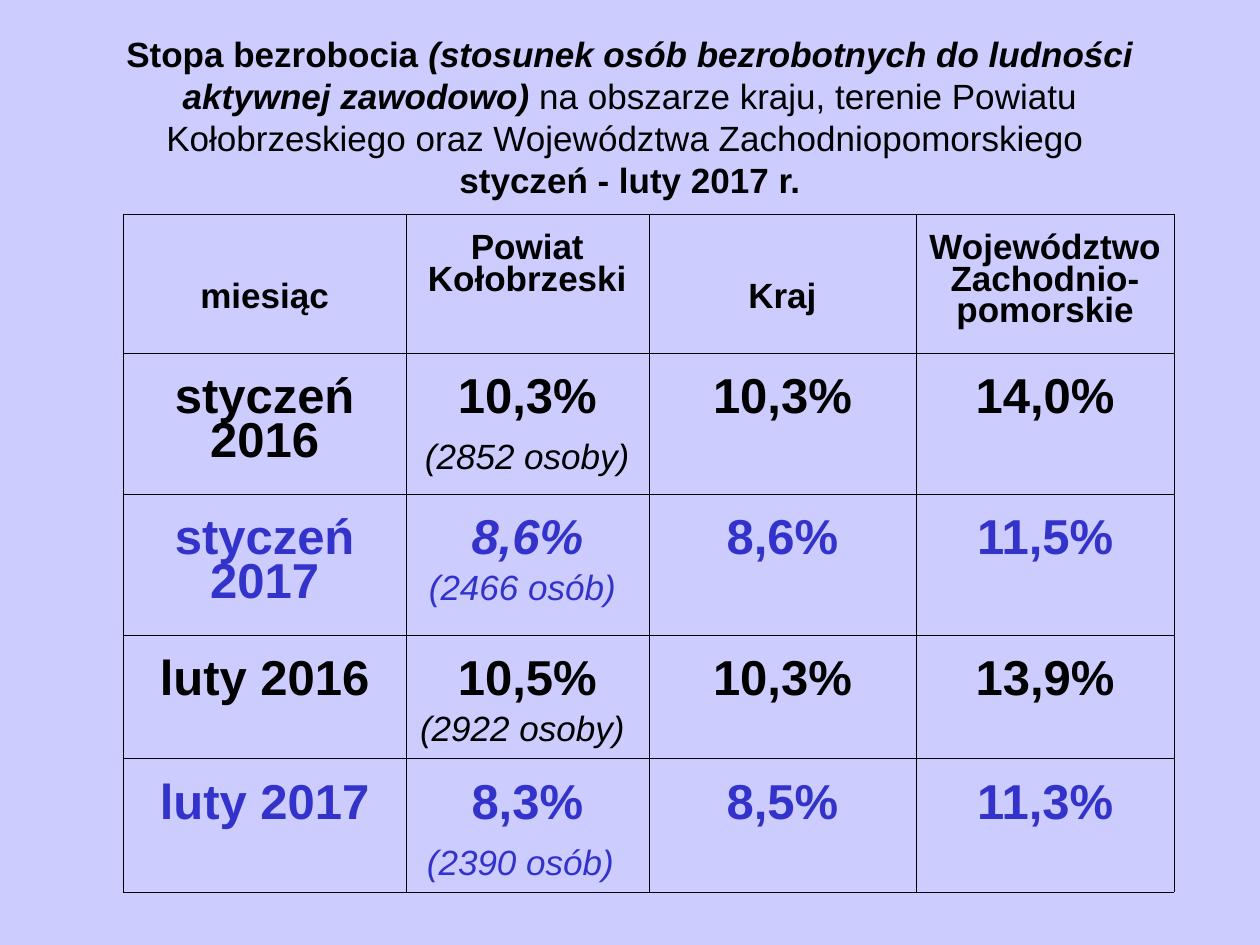
import dataclasses

import pptx
import pptx.dml.color
import pptx.enum.text
import pptx.oxml
import pptx.oxml.ns
import pptx.util

Inches, Pt = pptx.util.Inches, pptx.util.Pt
CENTER = pptx.enum.text.PP_ALIGN.CENTER
ANCHOR = pptx.enum.text.MSO_ANCHOR


@dataclasses.dataclass(frozen=True)
class Theme:
    background: str = "CCCCFF"
    ink: str = "000000"
    accent: str = "3333CC"
    font: str = "Arial"
    small: int = 20
    large: int = 28
    tight: float = 0.81
    inner_line: float = 0.11
    outer_line: float = 0.23


@dataclasses.dataclass(frozen=True)
class Span:
    text: str
    size: int = Theme.small
    bold: bool = False
    italic: bool = False


class SlideBuilder:
    def __init__(self, deck, theme):
        self.deck, self.theme = deck, theme
        self.page = deck.slides.add_slide(deck.slide_layouts[5])
        fill = self.page.background.fill
        fill.solid()
        fill.fore_color.rgb = self.color(theme.background)

    def color(self, value):
        return pptx.dml.color.RGBColor.from_string(value)

    def place(self, left, top, width, height):
        """Turn shares of the slide's size into lengths."""
        across, down = self.deck.slide_width, self.deck.slide_height
        return [round(share * side) for share, side in
                zip((left, top, width, height), (across, down, across, down))]

    def add_spans(self, para, spans, color):
        para.alignment = CENTER
        for span in spans:
            run = para.add_run()
            run.text = span.text
            font = run.font
            font.name, font.size = self.theme.font, Pt(span.size)
            font.bold, font.italic = span.bold, span.italic
            font.color.rgb = self.color(color)

    def title(self, lines, area):
        box = self.page.shapes.title
        box.left, box.top, box.width, box.height = self.place(*area)
        frame = box.text_frame
        frame.word_wrap = True
        frame.auto_size = pptx.enum.text.MSO_AUTO_SIZE.NONE
        frame.vertical_anchor = ANCHOR.MIDDLE
        para = frame.paragraphs[0]
        for index, spans in enumerate(lines):
            if index:
                para.add_line_break()
            self.add_spans(para, spans, self.theme.ink)

    def table(self, area, columns, rows):
        box = self.page.shapes.add_table(len(rows), len(columns), *self.place(*area))
        grid = box.table
        grid.first_row = grid.horz_banding = False
        for column, width in zip(grid.columns, columns):
            column.width = Inches(width)
        for row, (height, color, space, inset, cells) in enumerate(rows):
            grid.rows[row].height = Inches(height)
            for column, paragraphs in enumerate(cells):
                cell = grid.cell(row, column)
                self.borders(cell, {
                    "L": column == 0, "R": column == len(columns) - 1,
                    "T": row == 0, "B": row == len(rows) - 1})
                cell.fill.background()
                cell.margin_top = Inches(inset)
                self.cell_text(cell, paragraphs, color, space)
        return grid

    def cell_text(self, cell, paragraphs, color, space):
        frame = cell.text_frame
        for index, spans in enumerate(paragraphs):
            para = frame.add_paragraph() if index else frame.paragraphs[0]
            para.line_spacing = self.theme.tight
            para.space_before = Pt(space)
            self.add_spans(para, spans, color)

    def borders(self, cell, outer_sides):
        properties = cell._tc.get_or_add_tcPr()
        for side, outer in outer_sides.items():
            width = self.theme.outer_line if outer else self.theme.inner_line
            properties.append(pptx.oxml.parse_xml(
                f'<a:ln{side} {pptx.oxml.ns.nsdecls("a")} w="{Pt(width)}">'
                f'<a:solidFill><a:srgbClr val="{self.theme.ink}"/></a:solidFill>'
                f'</a:ln{side}>'))


def main():
    theme = Theme()
    deck = pptx.Presentation()
    deck.slide_width, deck.slide_height = Inches(10), Inches(7.5)
    slide = SlideBuilder(deck, theme)

    slide.title([
        [Span("Stopa bezrobocia ", bold=True),
         Span("(stosunek osób bezrobotnych do ludności aktywnej zawodowo)",
              bold=True, italic=True),
         Span(" na obszarze kraju, terenie Powiatu Kołobrzeskiego"
              " oraz Województwa Zachodniopomorskiego ")],
        [Span("styczeń - luty 2017 r.", bold=True)],
    ], (0.05, 0.04, 0.9, 1.25 / 7.5))

    def large(text, italic=False):
        return Span(text, theme.large, True, italic)

    def people(text):
        return Span(text, italic=True)

    wide_space = Span(" ", theme.large)
    # month, row height, colour, district rate, people, country, region
    months = [
        ("styczeń 2016", 1.12, theme.ink, large("10,3%"),
         [people("(2852 osoby)"), wide_space], "10,3%", "14,0%"),
        ("styczeń 2017", 1.12, theme.accent, large("8,6%", italic=True),
         [people("(2466 osób) ")], "8,6%", "11,5%"),
        ("luty 2016", 0.98, theme.ink, large("10,5%"),
         [people("(2922 osoby) ")], "10,3%", "13,9%"),
        ("luty 2017", 1.06, theme.accent, large("8,3%"),
         [people("(2390 osób)"), wide_space], "8,5%", "11,3%"),
    ]
    headings = ["miesiąc", "Powiat Kołobrzeski", "Kraj", "Województwo Zachodnio-pomorskie"]
    rows = [(1.1, theme.ink, 5, 0.16, [[[Span(text, bold=True)]] for text in headings])]
    for month, height, color, rate, count, country, region in months:
        rows.append((height, color, 7, 0.2, [
            [[large(month)]], [[rate], count], [[large(country)]], [[large(region)]]]))
    grid = slide.table((0.098, 1.7 / 7.5, 0.834, 5.38 / 7.5), [2.24, 1.93, 2.12, 2.05], rows)
    for column in (0, 2):
        grid.cell(0, column).margin_top = Inches(0.55)

    deck.save("out.pptx")


if __name__ == "__main__":
    main()
